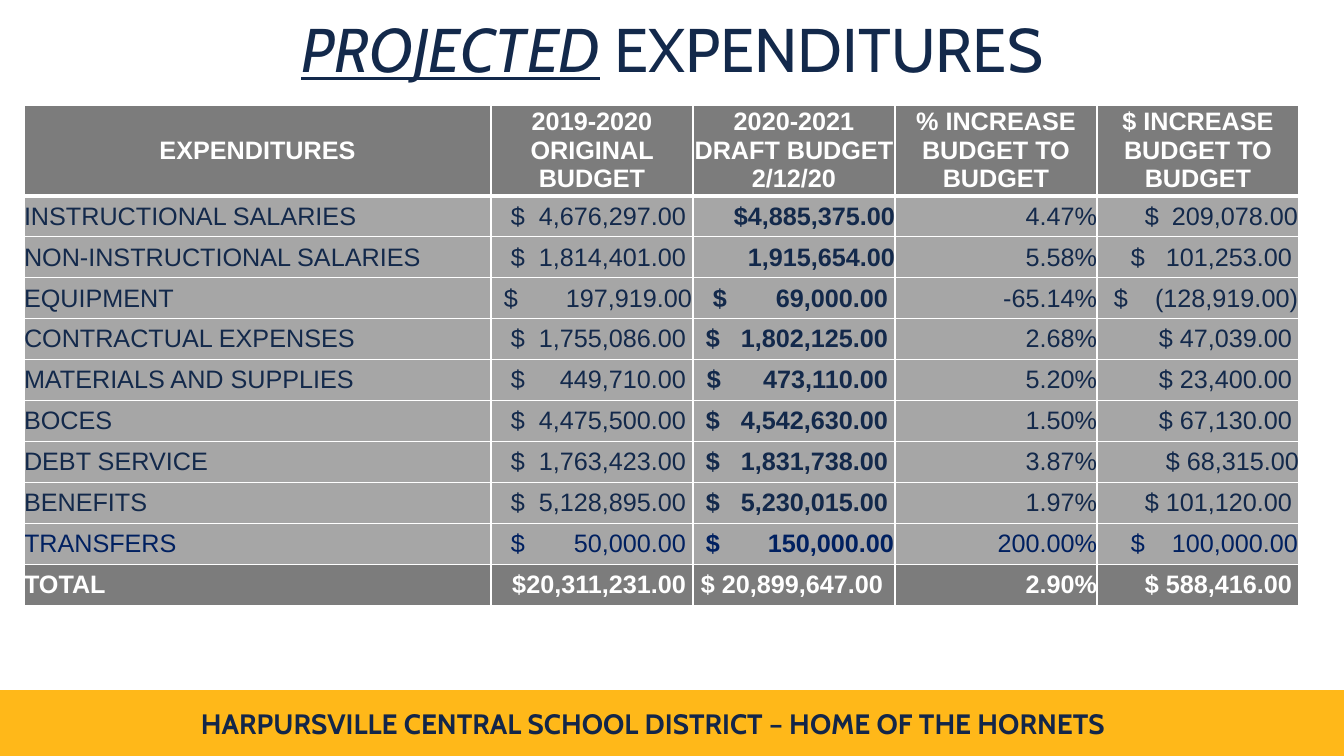
"""Build the projected expenditures slide with its budget table and footer band."""
from dataclasses import dataclass

from lxml.etree import SubElement
from pptx import Presentation
from pptx.dml.color import RGBColor
from pptx.enum.shapes import MSO_SHAPE as Shape
from pptx.enum.text import MSO_ANCHOR as Anchor, MSO_AUTO_SIZE as AutoSize, PP_ALIGN as Align
from pptx.oxml.ns import qn
from pptx.util import Emu, Pt

TITLE = [("PROJECTED", {"italic": True, "underline": True}), (" EXPENDITURES", {})]
FOOTER = "HARPURSVILLE CENTRAL SCHOOL DISTRICT – HOME OF THE HORNETS"
HEADINGS = [
    "EXPENDITURES",
    "2019-2020 ORIGINAL BUDGET",
    "2020-2021 DRAFT BUDGET 2/12/20",
    "% INCREASE BUDGET TO BUDGET",
    "$ INCREASE BUDGET TO BUDGET",
]
# fmt: off
ROWS = [
    ("INSTRUCTIONAL SALARIES", ("4,676,297.00", 7, 20), ("$4,885,375.00", 0), ("4.47%", 0), ("209,078.00", 0, 48)),
    ("NON-INSTRUCTIONAL SALARIES", ("1,814,401.00", 7, 20), ("1,915,654.00", 0), ("5.58%", 0), ("101,253.00", 7, 34)),
    ("EQUIPMENT", ("197,919.00", 0, 13), ("69,000.00", 7, 20), ("-65.14%", 0), ("(128,919.00)", 0, 17)),
    ("CONTRACTUAL EXPENSES", ("1,755,086.00", 7, 20), ("1,802,125.00", 7, 13), ("2.68%", 0), ("$ 47,039.00", 7)),
    ("MATERIALS AND SUPPLIES", ("449,710.00", 7, 20), ("473,110.00", 7, 14), ("5.20%", 0), ("$ 23,400.00", 7)),
    ("BOCES", ("4,475,500.00", 7, 20), ("4,542,630.00", 7, 13), ("1.50%", 0), ("$ 67,130.00", 7)),
    ("DEBT SERVICE", ("1,763,423.00", 7, 20), ("1,831,738.00", 7, 13), ("3.87%", 0), ("$ 68,315.00", 0)),
    ("BENEFITS", ("5,128,895.00", 7, 20), ("5,230,015.00", 7, 13), ("1.97%", 0), ("$ 101,120.00", 7)),
    ("TRANSFERS", ("50,000.00", 7, 20), ("150,000.00", 0, 13), ("200.00%", 0), ("100,000.00", 0, 34)),
    ("TOTAL", ("$20,311,231.00", 7), ("$ 20,899,647.00", 12), ("2.90%", 0), ("$ 588,416.00", 7)),
]
# fmt: on
SLIDE = (1344, 756)
TITLE_BOX = (93, 0, 1159, 105)
BAND_BOX = (0, 691, 1344, 64)
FOOTER_BOX = (177, 702, 952, 44)
TABLE_CORNER = (24, 105)
COLUMN_WIDTHS = [467] + [202] * 4
ROW_HEIGHTS = [84] + [41] * len(ROWS)
DRAFT_COLUMN = 2


@dataclass(frozen=True)
class Theme:
    """Colours, fonts and type sizes of the slide."""
    navy: str = "13294B"
    footer_navy: str = "132649"
    transfer_blue: str = "002060"
    gold: str = "FFB819"
    white: str = "FFFFFF"
    dark_grey: str = "7C7C7C"
    light_grey: str = "A6A6A6"
    display: str = "Cabin"
    body: str = "Arial"
    title_size: int = 44
    footer_size: int = 20
    table_size: int = 18


THEME = Theme()


def px(length):
    """Turn pixels into EMU."""
    return Emu(round(length * 914400 / 100.8))


def assign(target, values):
    """Set each named attribute of the target."""
    for name, value in values.items():
        setattr(target, name, value)


def paint(fill, color):
    """Give a fill one solid colour."""
    fill.solid()
    fill.fore_color.rgb = RGBColor.from_string(color)


def write(para, text, font_name, size, color, **styles):
    """Add one formatted run to a paragraph."""
    span = para.add_run()
    span.text = text
    assign(span.font, {"name": font_name, "size": Pt(size), **styles})
    span.font.color.rgb = RGBColor.from_string(color)


def add_borders(cell, widths):
    """Draw white borders on the four sides of a cell."""
    properties = cell._tc.get_or_add_tcPr()
    for index, (side, width) in enumerate(widths.items()):
        line = SubElement(properties, qn(f"a:ln{side}"), w=str(Pt(width)))
        fill = SubElement(line, qn("a:solidFill"))
        SubElement(fill, qn("a:srgbClr"), val=THEME.white)
        properties.insert(index, line)


def add_right_tab(para, position):
    """Add a right-aligned tab stop to a paragraph."""
    tabs = SubElement(para._p.get_or_add_pPr(), qn("a:tabLst"))
    SubElement(tabs, qn("a:tab"), pos=str(px(position)), algn="r")


def fill_cell(cell, row, column, entry):
    """Place, colour and border one table cell."""
    is_header, is_total = row == 0, row == len(ROWS)
    is_strong = is_header or is_total
    text, gap, sign = (entry, 0, None) if isinstance(entry, str) else (*entry, None)[:3]
    color = THEME.white if is_strong else THEME.navy
    if ROWS[row - 1][0] == "TRANSFERS" and not is_header:
        color = THEME.transfer_blue
    paint(cell.fill, THEME.dark_grey if is_strong else THEME.light_grey)
    add_borders(cell, {"L": 1, "R": 1, "T": 3 if row == 1 else 1, "B": 3 if is_header else 1})
    assign(cell, {
        "vertical_anchor": Anchor.MIDDLE,
        "margin_left": px(sign or 0),
        "margin_right": px(gap if sign is None else 0),
        "margin_top": 0,
        "margin_bottom": 0,
    })
    para = cell.text_frame.paragraphs[0]
    if is_header:
        para.alignment = Align.CENTER
    elif column == 0 or sign is not None:
        para.alignment = Align.LEFT
    else:
        para.alignment = Align.RIGHT
    if sign is not None:
        add_right_tab(para, COLUMN_WIDTHS[column] - sign - max(gap, 1))
        text = f"$\t{text}"
    write(para, text, THEME.body, THEME.table_size, color,
          bold=is_strong or column == DRAFT_COLUMN)


def add_title(page):
    """Format the title placeholder."""
    box = page.shapes.title
    assign(box, dict(zip(("left", "top", "width", "height"), map(px, TITLE_BOX))))
    paint(box.fill, THEME.white)
    assign(box.text_frame, {"vertical_anchor": Anchor.MIDDLE, "auto_size": AutoSize.NONE})
    para = box.text_frame.paragraphs[0]
    assign(para, {"alignment": Align.CENTER, "line_spacing": 0.9})
    for text, styles in TITLE:
        write(para, text, THEME.display, THEME.title_size, THEME.navy, **styles)


def add_footer(page):
    """Draw the gold band and its text."""
    band = page.shapes.add_shape(Shape.RECTANGLE, *map(px, BAND_BOX))
    band.shadow.inherit = False
    paint(band.fill, THEME.gold)
    paint(band.line.fill, THEME.gold)
    band.line.width = Pt(1)
    box = page.shapes.add_textbox(*map(px, FOOTER_BOX))
    box.text_frame.word_wrap = True
    para = box.text_frame.paragraphs[0]
    para.alignment = Align.CENTER
    write(para, FOOTER, THEME.display, THEME.footer_size, THEME.footer_navy, bold=True)


def add_budget_table(page):
    """Build the expenditures table."""
    size = (sum(COLUMN_WIDTHS), sum(ROW_HEIGHTS))
    table = page.shapes.add_table(
        len(ROW_HEIGHTS), len(COLUMN_WIDTHS), *map(px, TABLE_CORNER + size)).table
    assign(table, {"first_row": False, "horz_banding": False})
    for column, width in zip(table.columns, COLUMN_WIDTHS):
        column.width = px(width)
    for row, height in zip(table.rows, ROW_HEIGHTS):
        row.height = px(height)
    for row, entries in enumerate([HEADINGS, *ROWS]):
        for column, entry in enumerate(entries):
            fill_cell(table.cell(row, column), row, column, entry)


def main():
    """Assemble and save the deck."""
    deck = Presentation()
    assign(deck, dict(zip(("slide_width", "slide_height"), map(px, SLIDE))))
    page = deck.slides.add_slide(deck.slide_layouts[5])
    add_footer(page)
    add_title(page)
    add_budget_table(page)
    deck.save("out.pptx")


if __name__ == "__main__":
    main()
